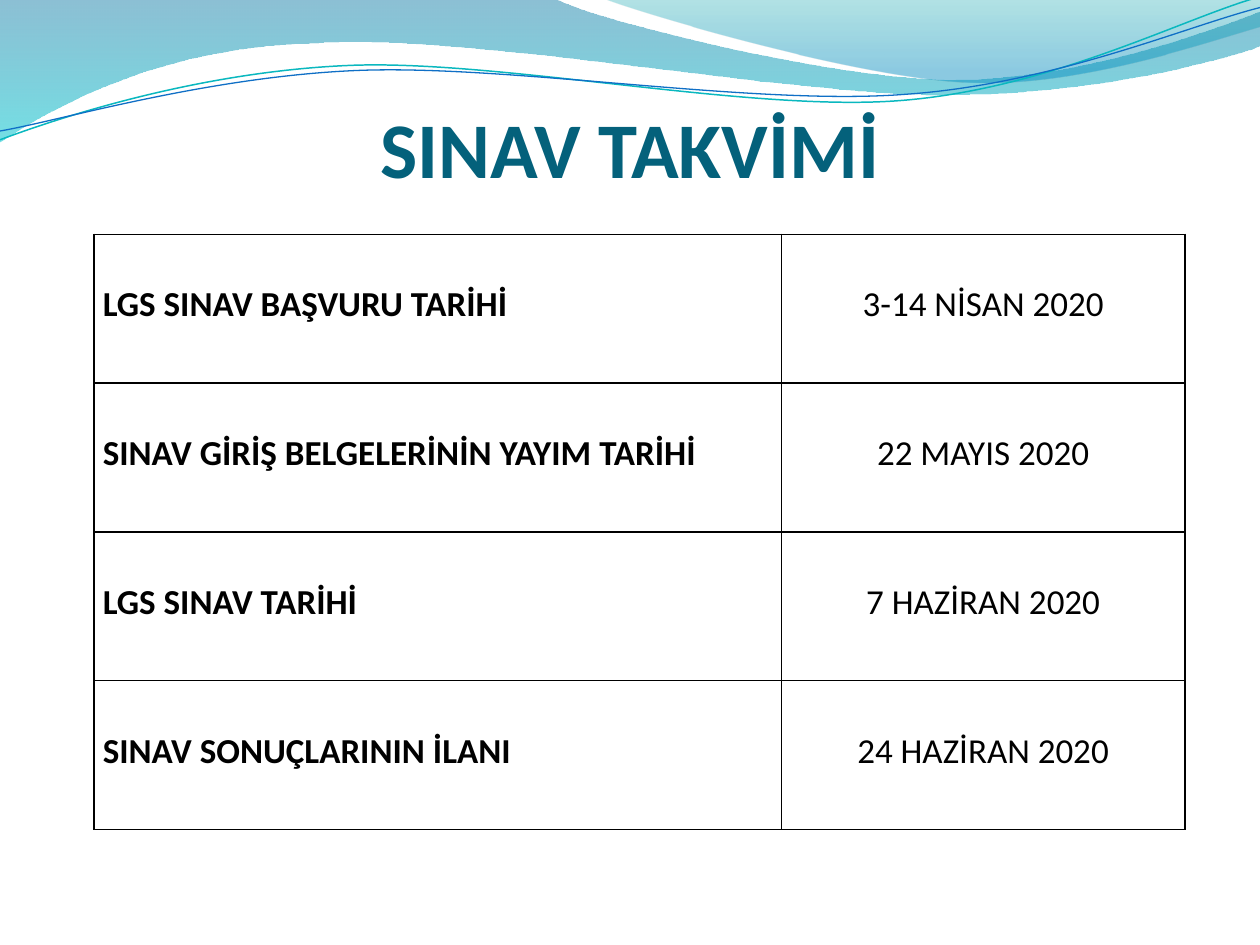
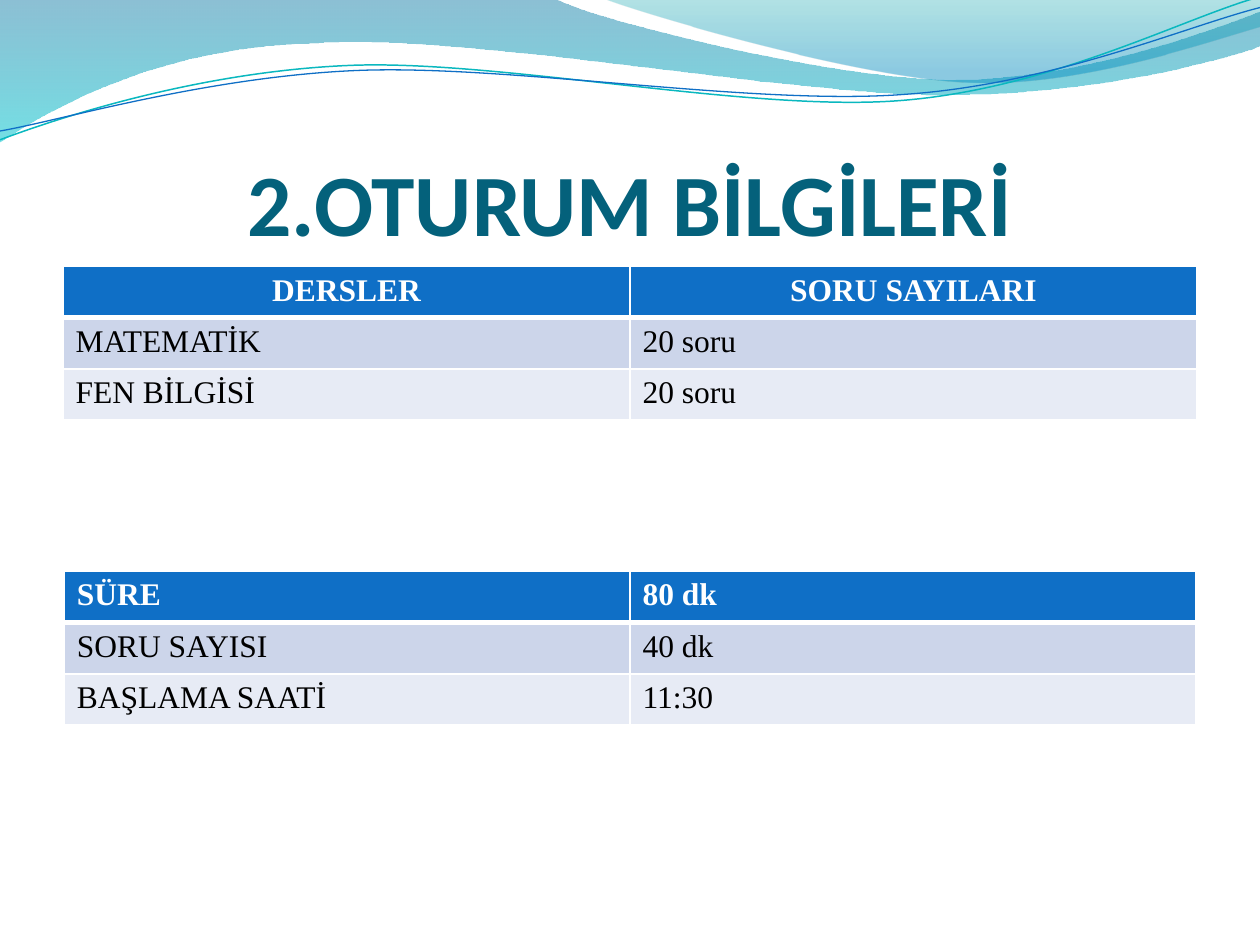
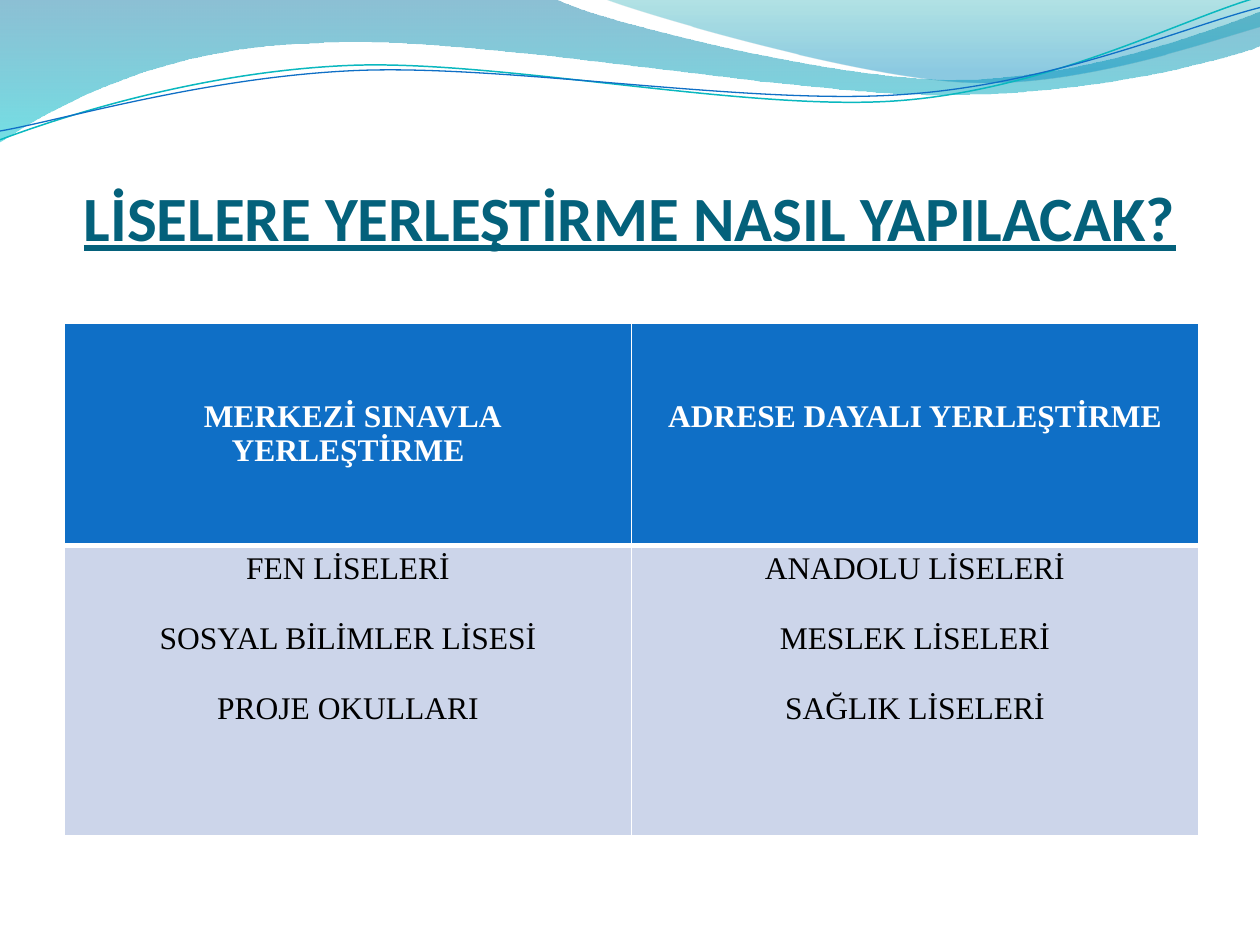
import pptx
import pptx.dml.color
import pptx.enum.text
import pptx.oxml
import pptx.oxml.ns
import pptx.util

INK = {
    "title": "04617B", "text": "000000", "white": "FFFFFF",
    "head": "0F6FC6", "odd": "CCD5EA", "even": "E7EBF5",
    "teal": "0AB8BF", "blue": "0F6FC6",
    "deep": "0074A1", "aqua": "00C6CF", "sea": "00A1A9", "sky": "008BBF",
}
SANS, SERIF = "Calibri", "Times New Roman"
COLS, ROWS = 100, 75
WIDE, HIGH = pptx.util.Inches(10), pptx.util.Inches(7.5)
LEFT, MID = pptx.enum.text.PP_ALIGN.LEFT, pptx.enum.text.PP_ALIGN.CENTER
ANCHOR = pptx.enum.text.MSO_ANCHOR

BANDS = [
    ((0, 0), [
        [(44, -0.1)],
        [(47.6, 1.7), (66.4, 6.3), (75.8, 6.3)],
        [(85.3, 6.3), (95.8, 2.6), (100, 0.9)],
        [(100.1, 3.6)],
        [(98.3, 4.4), (87, 7.6), (74.6, 7.5)],
        [(62.2, 7.5), (38.2, 2.8), (25.7, 3.4)],
        [(12.9, 3.6), (4.6, 8.3), (-0.1, 11.3)],
    ], [("deep", 0, 45), ("aqua", 1, 55)]),
    ((47.9, -0.1), [
        [(50.9, 1.1), (68.2, 6.2), (76.9, 6.5)],
        [(85.6, 6.9), (96.1, 3.2), (100, 2.1)],
        [(100, 0)],
    ], [("sea", 0, 30), ("sky", 0.8, 45)]),
]
LINES = [
    ((0, 11.1), [
        [(4.8, 9.3), (15.8, 5.7), (27.7, 5.2)],
        [(39.5, 4.7), (59.3, 8.9), (71.3, 8)],
        [(83.3, 7.1), (93.8, 1.5), (99.8, -0.2)],
    ], "teal", 0.85),
    ((0, 10.4), [
        [(4.7, 9.6), (16.4, 6.1), (28.3, 5.6)],
        [(40.3, 5.1), (59.7, 8.4), (71.7, 7.5)],
        [(83.6, 6.7), (94.1, 2.1), (100, 0.6)],
    ], "blue", 0.75),
]


def col(n):
    return round(WIDE * n / COLS)


def row(n):
    return round(HIGH * n / ROWS)


def place(box):
    x, y, w, h = box
    return col(x), row(y), col(w), row(h)


def tint(name):
    return pptx.dml.color.RGBColor.from_string(INK[name])


def trace(slide, start, parts, close):
    pen = slide.shapes.build_freeform(col(start[0]), row(start[1]))
    pen.add_line_segments([(col(x), row(y)) for part in parts for x, y in part], close=close)
    shape = pen.convert_to_shape()
    shape.shadow.inherit = False
    marks = iter(list(shape.element.iter(pptx.oxml.ns.qn("a:lnTo"))))
    for part in parts:
        group = [next(marks) for _ in part]
        if len(group) == 3:
            bend = pptx.oxml.parse_xml(f'<a:cubicBezTo {pptx.oxml.ns.nsdecls("a")}/>')
            group[0].addprevious(bend)
            for mark in group:
                bend.append(mark[0])
                mark.getparent().remove(mark)
    return shape


def shade(shape, stops):
    shape.line.fill.background()
    shape.fill.gradient()
    shape.fill.gradient_angle = 270
    for stop, (name, spot, _) in zip(shape.fill.gradient_stops, stops):
        stop.color.rgb = tint(name)
        stop.position = spot
    marks = shape.element.iter(pptx.oxml.ns.qn("a:srgbClr"))
    for mark, (_, _, part) in zip(list(marks), stops):
        mark.append(pptx.oxml.parse_xml(
            f'<a:alpha {pptx.oxml.ns.nsdecls("a")} val="{part * 1000}"/>'))


def waves(slide):
    shapes = []
    for start, parts, stops in BANDS:
        shape = trace(slide, start, parts, True)
        shade(shape, stops)
        shapes.append(shape)
    for start, parts, name, width in LINES:
        shape = trace(slide, start, parts, False)
        shape.fill.background()
        shape.line.color.rgb = tint(name)
        shape.line.width = pptx.util.Pt(width)
        shapes.append(shape)
    tree = slide.slide_layout.slide_master.shapes.element
    for n, shape in enumerate(shapes, 20):
        shape.element.nvSpPr.cNvPr.set("id", str(n))
        tree.append(shape.element)


def style(para, size, face, name, bold, align):
    para.alignment = align
    para.font.size = pptx.util.Pt(size)
    para.font.name = face
    para.font.bold = bold
    para.font.color.rgb = tint(name)


def head(slide, text, size, box, under=None):
    title = slide.shapes.title
    title.left, title.top, title.width, title.height = place(box)
    frame = title.text_frame
    frame.text = text
    frame.word_wrap = True
    frame.auto_size = pptx.enum.text.MSO_AUTO_SIZE.NONE
    frame.vertical_anchor = ANCHOR.BOTTOM
    frame.margin_left = frame.margin_right = frame.margin_bottom = 0
    frame.margin_top = row(0.5)
    style(frame.paragraphs[0], size, SANS, "title", True, MID)
    frame.paragraphs[0].font.underline = under


def edge(cell, name, top=1, base=1):
    for side, width in (("L", 1), ("R", 1), ("T", top), ("B", base)):
        cell._tc.get_or_add_tcPr().append(pptx.oxml.parse_xml(
            f'<a:ln{side} {pptx.oxml.ns.nsdecls("a")} w="{pptx.util.Pt(width)}">'
            f'<a:solidFill><a:srgbClr val="{INK[name]}"/></a:solidFill></a:ln{side}>'))


def grid(slide, box, cells, spans, steps):
    table = slide.shapes.add_table(len(steps), len(spans), *place(box)).table
    table.first_row = table.horz_banding = False
    for column, span in zip(table.columns, spans):
        column.width = col(span)
    for line, step in zip(table.rows, steps):
        line.height = row(step)
    for r, texts in enumerate(cells):
        for c, text in enumerate(texts):
            table.cell(r, c).text = text
            yield r, c, table.cell(r, c)


def dates(slide, box, cells):
    x, y, w, h = box
    spans = 0.63 * w, 0.37 * w
    steps = [h / len(cells)] * len(cells)
    for r, c, cell in grid(slide, box, cells, spans, steps):
        edge(cell, "text")
        cell.fill.background()
        cell.vertical_anchor = ANCHOR.MIDDLE
        cell.margin_left = cell.margin_right = col(0.7)
        cell.margin_top, cell.margin_bottom = 0, row(1.1)
        para = cell.text_frame.paragraphs[0]
        style(para, 20, SANS, "text", c == 0, MID if c else LEFT)
        para.line_spacing = 1.15


def panel(slide, box, cells, steps, aligns, drop=0.5):
    spans = [box[2] / 2] * 2
    for r, c, cell in grid(slide, box, cells, spans, steps):
        edge(cell, "white", 3 if r == 1 else 1, 1 if r else 3)
        cell.fill.solid()
        cell.fill.fore_color.rgb = tint(("even" if r % 2 == 0 else "odd") if r else "head")
        cell.margin_top = row(0.5 if r else drop)
        for n, para in enumerate(cell.text_frame.paragraphs):
            style(para, 18, SERIF, "text" if r else "white", r == 0, aligns[min(r, 1)])
            if n:
                para.space_before = pptx.util.Pt(20)


def main():
    deck = pptx.Presentation()
    deck.slide_width, deck.slide_height = WIDE, HIGH
    first, second, third = [deck.slides.add_slide(deck.slide_layouts[5]) for _ in range(3)]
    waves(first)

    head(first, "SINAV TAKVİMİ", 45, (5, 7.7, 90, 7.75))
    dates(first, (7.46, 18.6, 86.6, 47.24), [
        ("LGS SINAV BAŞVURU TARİHİ", "3-14 NİSAN 2020"),
        ("SINAV GİRİŞ BELGELERİNİN YAYIM TARİHİ", "22 MAYIS 2020"),
        ("LGS SINAV TARİHİ", "7 HAZİRAN 2020"),
        ("SINAV SONUÇLARININ İLANI", "24 HAZİRAN 2020"),
    ])

    head(second, "2.OTURUM BİLGİLERİ", 50, (5, 7.7, 90, 12.5))
    steps = [4.06] * 3
    panel(second, (5, 21.16, 90, sum(steps)), [
        ("DERSLER", "SORU SAYILARI"),
        ("MATEMATİK", "20 soru"),
        ("FEN BİLGİSİ", "20 soru"),
    ], steps, (MID, LEFT))
    panel(second, (5.1, 45.36, 89.8, sum(steps)), [
        ("SÜRE", "80 dk"),
        ("SORU SAYISI", "40 dk"),
        ("BAŞLAMA SAATİ", "11:30"),
    ], steps, (LEFT, LEFT))

    head(third, "LİSELERE YERLEŞTİRME NASIL YAPILACAK?", 36, (5, 7.7, 90, 12.5), True)
    steps = [17.64, 23.06]
    panel(third, (5.12, 25.66, 90, sum(steps)), [
        (" MERKEZİ SINAVLA YERLEŞTİRME", "ADRESE DAYALI YERLEŞTİRME"),
        ("FEN LİSELERİ\nSOSYAL BİLİMLER LİSESİ\nPROJE OKULLARI",
         "ANADOLU LİSELERİ\nMESLEK LİSELERİ\nSAĞLIK LİSELERİ"),
    ], steps, (MID, MID), 6)

    deck.save("out.pptx")


if __name__ == "__main__":
    main()
